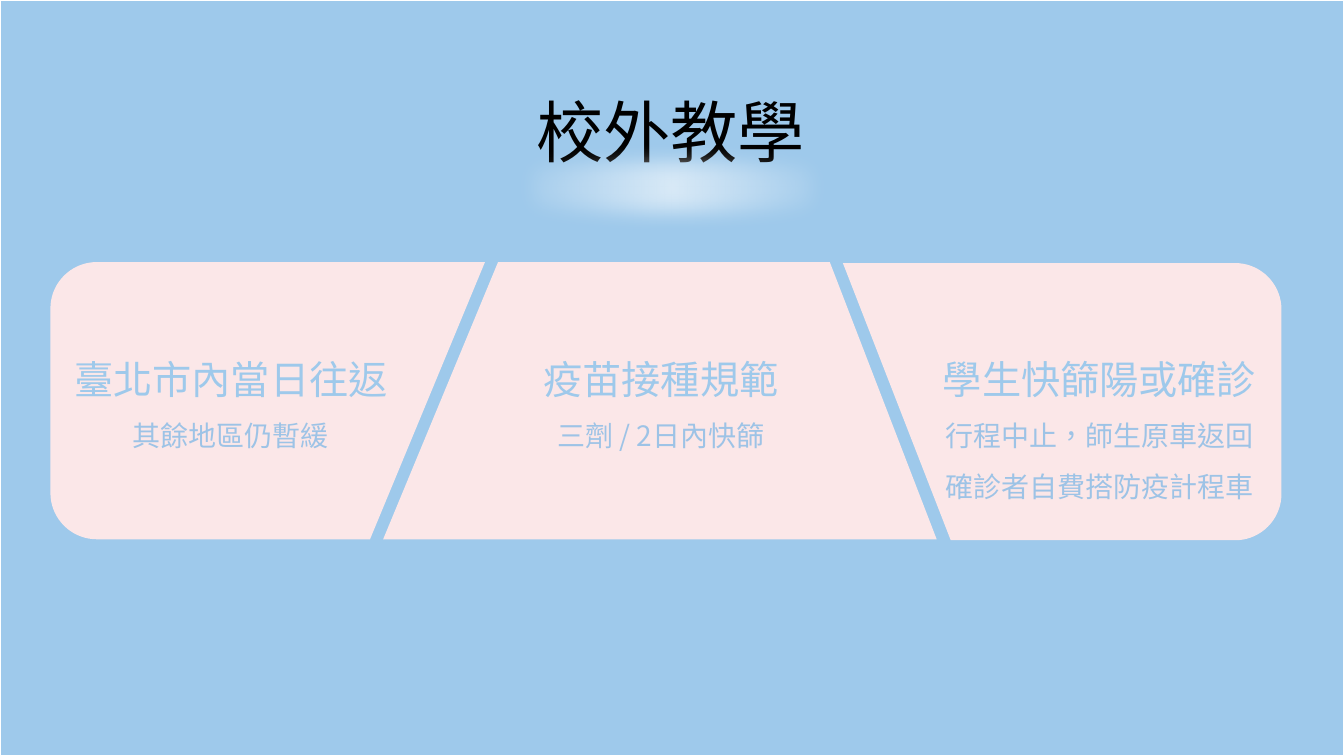
import math

import lxml.etree
import pptx
import pptx.dml.color
import pptx.enum.shapes
import pptx.enum.text
import pptx.oxml.ns
import pptx.util

Inches = pptx.util.Inches
Shape = pptx.enum.shapes.MSO_SHAPE
qn = pptx.oxml.ns.qn

COLORS = {
    "sky": "9EC9EB",
    "detail": "9DC3E6",
    "panel": "FBE7E8",
    "white": "FFFFFF",
    "title": "000000",
}
FONT = "Noto Sans CJK SC"
CORNER = 0.46
PANEL_HEIGHT = 2.75

# Each panel: top, outline corners as (x, end, radius) clockwise from top left,
# text box (left, width, height), heading and details.
PANELS = [
    {"top": 2.6, "corners": [(0.5, 0, CORNER), (4.81, 0, 0), (3.67, 1, 0), (0.5, 1, CORNER)],
     "text_box": (0.59, 3.24, 3.4, 1.25),
     "heading": "臺北市內當日往返", "details": ["其餘地區仍暫緩"]},
    {"top": 2.6, "corners": [(4.94, 0, 0), (8.23, 0, 0), (9.29, 1, 0), (3.8, 1, 0)],
     "text_box": (4.83, 3.24, 3.45, 1.26),
     "heading": "疫苗接種規範", "details": ["三劑 / 2日內快篩"]},
    {"top": 2.61, "corners": [(8.36, 0, 0), (12.71, 0, CORNER), (12.71, 1, CORNER), (9.43, 1, 0)],
     "text_box": (9.18, 3.24, 3.45, 1.76),
     "heading": "學生快篩陽或確診",
     "details": ["行程中止，師生原車返回", "確診者自費搭防疫計程車"]},
]


def rgb(name):
    return pptx.dml.color.RGBColor.from_string(COLORS[name])


def fill_flat(shape, color):
    shape.shadow.inherit = False
    shape.fill.solid()
    shape.fill.fore_color.rgb = rgb(color)
    shape.line.fill.background()


def add_text(slide, box, lines, wrap, **paragraph_format):
    """Write lines of (text, size, color) into a text box."""
    frame = slide.shapes.add_textbox(*map(Inches, box)).text_frame
    frame.word_wrap = wrap
    frame.auto_size = pptx.enum.text.MSO_AUTO_SIZE.SHAPE_TO_FIT_TEXT
    for index, (text, size, color) in enumerate(lines):
        paragraph = frame.add_paragraph() if index else frame.paragraphs[0]
        for name, value in paragraph_format.items():
            setattr(paragraph, name, value)
        run = paragraph.add_run()
        run.text = text
        for name, value in {"size": pptx.util.Pt(size), "name": FONT}.items():
            setattr(run.font, name, value)
        run.font.color.rgb = rgb(color)
        properties = run._r.get_or_add_rPr()
        properties.set("lang", "zh-TW")
        lxml.etree.SubElement(properties, qn("a:ea")).set("typeface", FONT)


def add_background(slide, box):
    background = slide.shapes.add_shape(Shape.RECTANGLE, *map(Inches, box))
    fill_flat(background, "sky")
    background.line.color.rgb = rgb("white")
    background.line.width = pptx.util.Pt(1)


def add_glow(slide, box):
    """Draw a white ellipse that fades out from its centre."""
    glow = slide.shapes.add_shape(Shape.OVAL, *map(Inches, box))
    fill_flat(glow, "white")
    properties = glow._element.spPr
    stops = "".join(
        f'<a:gs pos="{position * 1000}"><a:srgbClr val="{COLORS["white"]}">'
        f'<a:alpha val="{opacity * 1000}"/></a:srgbClr></a:gs>'
        for position, opacity in [(0, 60), (55, 0), (100, 0)])
    gradient = lxml.etree.fromstring(
        f'<a:gradFill xmlns:a="{pptx.oxml.ns.nsdecls("a").split(chr(34))[1]}" rotWithShape="1">'
        f'<a:gsLst>{stops}</a:gsLst><a:path path="circle">'
        '<a:fillToRect l="50000" t="50000" r="50000" b="50000"/></a:path></a:gradFill>')
    properties.replace(properties.find(qn("a:solidFill")), gradient)
    soft_edge = lxml.etree.SubElement(properties.find(qn("a:effectLst")), qn("a:softEdge"))
    soft_edge.set("rad", str(Inches(0.2)))


def add_title(slide, box):
    left, top, width, height = box
    add_text(slide, (left + 1.53, top, 2.89, 0.91), [("校外教學", 48, "title")], False)
    add_glow(slide, (left, top + 0.55, width, height - 0.55))


def outline(panel):
    """Return the points of a panel, with its round corners as quarter arcs."""
    points = []
    for index, (x, end, radius) in enumerate(panel["corners"]):
        y = panel["top"] + end * PANEL_HEIGHT
        if not radius:
            points.append((x, y))
            continue
        center_x = x + (radius if index in (0, 3) else -radius)
        center_y = y + (-radius if end else radius)
        for step in range(19):
            angle = math.radians(180 + 90 * index + 5 * step)
            points.append((center_x + radius * math.cos(angle),
                           center_y + radius * math.sin(angle)))
    return points


def add_panel(slide, panel):
    points = [(Inches(x), Inches(y)) for x, y in outline(panel)]
    builder = slide.shapes.build_freeform(*points[0])
    builder.add_line_segments(points[1:], close=True)
    fill_flat(builder.convert_to_shape(), "panel")


def add_panel_text(slide, panel):
    lines = [(panel["heading"], 28, "sky")]
    lines += [(detail, 20, "detail") for detail in panel["details"]]
    add_text(slide, panel["text_box"], lines, True,
             alignment=pptx.enum.text.PP_ALIGN.CENTER, line_spacing=1.5)


def main():
    deck = pptx.Presentation()
    deck.slide_width, deck.slide_height = Inches(13.33), Inches(7.5)
    slide = deck.slides.add_slide(deck.slide_layouts[6])
    add_background(slide, (0, 0, 13.33, 7.5))
    add_title(slide, (3.69, 0.85, 5.95, 1.46))
    for add_part in (add_panel, add_panel_text):
        for panel in PANELS:
            add_part(slide, panel)
    deck.save("out.pptx")


if __name__ == "__main__":
    main()
